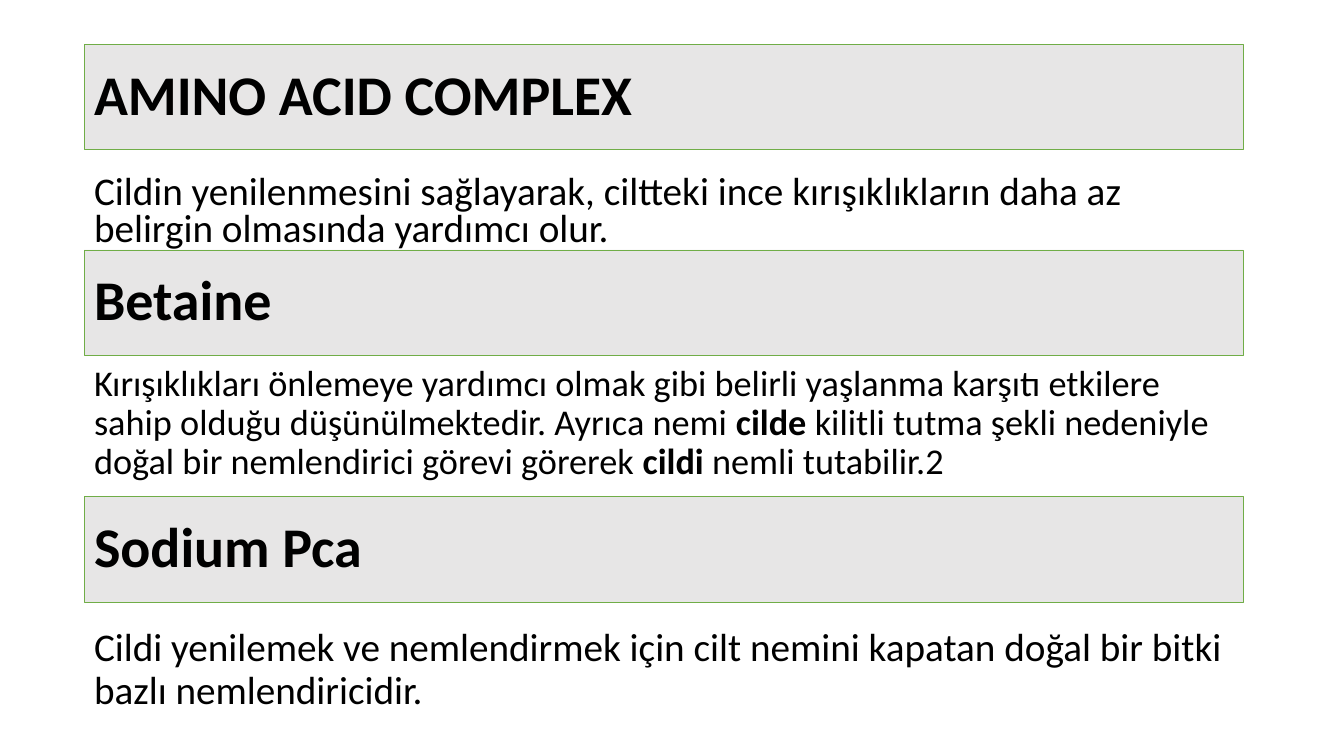
from pptx import Presentation
from pptx.dml.color import RGBColor
from pptx.enum.shapes import MSO_SHAPE as Shape
from pptx.enum.text import MSO_ANCHOR as Anchor, PP_ALIGN as Align
from pptx.util import Cm, Pt

# Content: runs are (text, bold); lengths in centimetres
SECTIONS = [
    {"heading": "AMINO ACID COMPLEX", "heading_top": 1.12,
     "body_top": 4.29, "body_height": 2.31, "size": 28, "line_spacing": 0.8,
     "runs": [("Cildin yenilenmesini sağlayarak, ciltteki ince kırışıklıkların "
               "daha az belirgin olmasında yardımcı olur.", False)]},
    {"heading": "Betaine", "heading_top": 6.3,
     "body_top": 9.07, "body_height": 3.35, "size": 25.9, "line_spacing": 0.9,
     "runs": [("Kırışıklıkları önlemeye yardımcı olmak gibi belirli yaşlanma "
               "karşıtı etkilere sahip olduğu düşünülmektedir. Ayrıca nemi ", False),
              ("cilde", True),
              (" kilitli tutma şekli nedeniyle doğal bir nemlendirici görevi "
               "görerek ", False),
              ("cildi", True),
              (" nemli tutabilir.2", False)]},
    {"heading": "Sodium Pca", "heading_top": 12.52,
     "body_top": 15.7, "body_height": 3.35, "size": 28, "line_spacing": 0.9,
     "runs": [("Cildi yenilemek ve nemlendirmek için cilt nemini kapatan doğal "
               "bir bitki bazlı nemlendiricidir.", False)]},
]
COLORS = {"text": "000000", "band": "E7E6E6", "border": "70AD47"}
FONT = "Calibri"
LEFT, WIDTH, BAND_HEIGHT = Cm(2.12), Cm(29.21), Cm(2.65)


def color(name):
    return RGBColor.from_string(COLORS[name])


def write_text(shape, runs, size, line_spacing, space_before=0):
    shape.text_frame.word_wrap = True
    paragraph = shape.text_frame.paragraphs[0]
    paragraph.alignment = Align.LEFT
    paragraph.line_spacing = line_spacing
    paragraph.space_before = Pt(space_before)
    for text, bold in runs:
        run = paragraph.add_run()
        run.text = text
        run.font.name = FONT
        run.font.size = Pt(size)
        run.font.bold = bold
        run.font.color.rgb = color("text")


def add_heading(slide, section):
    band = slide.shapes.add_shape(
        Shape.RECTANGLE, LEFT, Cm(section["heading_top"]), WIDTH, BAND_HEIGHT)
    band.shadow.inherit = False
    band.fill.solid()
    band.fill.fore_color.rgb = color("band")
    band.line.color.rgb = color("border")
    band.line.width = Pt(0.5)
    band.text_frame.vertical_anchor = Anchor.MIDDLE
    write_text(band, [(section["heading"], True)], 40, 0.9)


def add_body(slide, section):
    body = slide.shapes.add_textbox(
        LEFT, Cm(section["body_top"]), WIDTH, Cm(section["body_height"]))
    write_text(body, section["runs"], section["size"],
               section["line_spacing"], space_before=10)


def main():
    presentation = Presentation()
    presentation.slide_width, presentation.slide_height = Cm(33.87), Cm(19.05)
    slide = presentation.slides.add_slide(presentation.slide_layouts[6])

    # Each section: description below its heading band
    for section in SECTIONS:
        add_body(slide, section)
        add_heading(slide, section)

    presentation.save("out.pptx")


if __name__ == "__main__":
    main()
